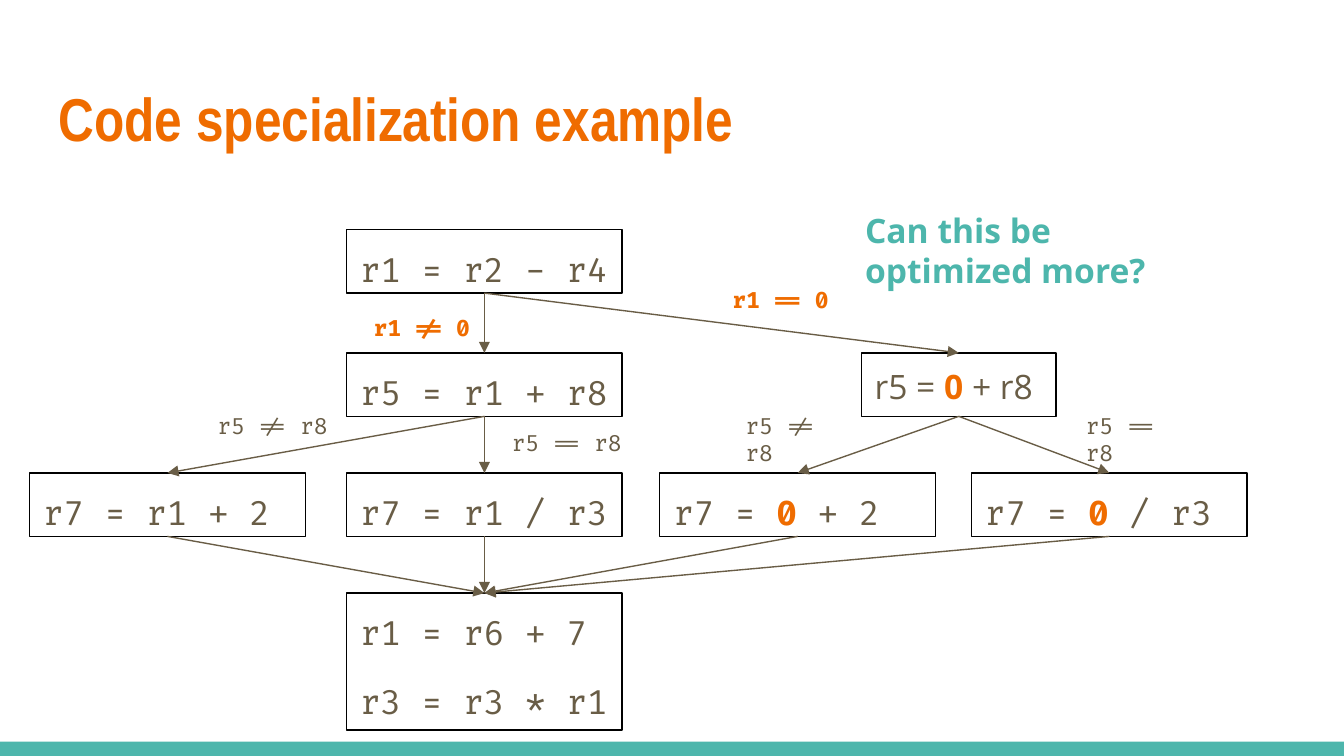
from lxml.etree import SubElement
from pptx import Presentation
from pptx.dml.color import RGBColor
from pptx.enum.shapes import MSO_CONNECTOR, MSO_SHAPE
from pptx.enum.text import MSO_ANCHOR as Anchor, PP_ALIGN as Align
from pptx.oxml.ns import qn
from pptx.util import Cm, Pt

TEAL = RGBColor(0x4D, 0xB6, 0xAC)
ORANGE = RGBColor(0xEF, 0x6C, 0x00)
BROWN = RGBColor(0x69, 0x5D, 0x46)
BLACK = RGBColor(0, 0, 0)
CODE, SANS, NARROW = "Fira Code", "Open Sans", "Arial Narrow"

BLOCK_WIDTH, BLOCK_HEIGHT = Cm(5.21), Cm(1.2)
TOP, BOTTOM = 0, 2  # connection sites of a rectangle


def plain(text):
    return [(text, BROWN, False)]


def bold(text, color=ORANGE):
    return [(text, color, True)]


def prepare_frame(shape, anchor=Anchor.TOP):
    frame = shape.text_frame
    frame.word_wrap = True
    frame.vertical_anchor = anchor
    frame.margin_left = frame.margin_right = Cm(0.25)
    frame.margin_top = frame.margin_bottom = Cm(0.25)
    return frame


def write_runs(paragraph, runs, font, size):
    paragraph.alignment = Align.LEFT
    for text, color, is_bold in runs:
        run = paragraph.add_run()
        run.text = text
        run.font.name = font
        run.font.size = Pt(size)
        run.font.bold = is_bold
        run.font.color.rgb = color


def add_text(slide, box, runs, font, size, anchor=Anchor.TOP):
    frame = prepare_frame(slide.shapes.add_textbox(*box), anchor)
    write_runs(frame.paragraphs[0], runs, font, size)


def add_block(slide, box, lines, font=CODE, line_spacing=1.15):
    """Outlined basic block with one paragraph for each line of code."""
    block = slide.shapes.add_shape(MSO_SHAPE.RECTANGLE, *box)
    block.shadow.inherit = False
    block.fill.background()
    block.line.color.rgb = BLACK
    block.line.width = Pt(0.75)
    frame = prepare_frame(block)
    for index, runs in enumerate(lines):
        paragraph = frame.add_paragraph() if index else frame.paragraphs[0]
        paragraph.line_spacing = line_spacing
        if index:
            paragraph.space_before = paragraph.space_after = Pt(12)
        write_runs(paragraph, runs, font, 18)
    return block


def add_arrow(slide, source, target):
    arrow = slide.shapes.add_connector(MSO_CONNECTOR.STRAIGHT, 0, 0, 0, 0)
    arrow.begin_connect(source, BOTTOM)
    arrow.end_connect(target, TOP)
    arrow.line.color.rgb = BROWN
    arrow.line.width = Pt(0.75)
    properties = arrow._element.spPr
    SubElement(properties.find(qn("a:ln")), qn("a:tailEnd"), type="triangle")
    SubElement(properties, qn("a:effectLst"))


def draw_footer(slide, box):
    bar = slide.shapes.add_shape(MSO_SHAPE.RECTANGLE, *box)
    bar.shadow.inherit = False
    bar.fill.solid()
    bar.fill.fore_color.rgb = TEAL
    bar.line.fill.background()


def draw_title(slide, box):
    add_text(slide, box, bold("Code specialization example"), NARROW, 32.4, Anchor.MIDDLE)


def draw_question(slide, box):
    add_text(slide, box, bold("Can this be optimized more?", TEAL), SANS, 18)


def draw_flow_graph(slide, left, top):
    """Control flow graph: blocks, arrows and branch conditions."""
    columns = [left + Cm(offset) for offset in (0, 5.99, 11.91, 17.8)]
    rows = [top + Cm(offset) for offset in (0, 2.33, 4.6, 6.87)]

    def block(column, row, *lines, height=BLOCK_HEIGHT):
        return add_block(slide, (columns[column], rows[row], BLOCK_WIDTH, height), lines)

    entry = block(1, 0, plain("r1 = r2 - r4"))
    general_sum = block(1, 1, plain("r5 = r1 + r8"))
    special_sum = add_block(
        slide, (left + Cm(15.72), rows[1], Cm(3.68), BLOCK_HEIGHT),
        [plain("r5 = ") + bold("0 ") + plain("+ r8")], SANS, 1.0)
    general_add = block(0, 2, plain("r7 = r1 + 2"))
    general_divide = block(1, 2, plain("r7 = r1 / r3"))
    special_add = block(2, 2, plain("r7 = ") + bold("0") + plain(" + 2"))
    special_divide = block(3, 2, plain("r7 = ") + bold("0 ") + plain("/ r3"))
    merge = block(1, 3, plain("r1 = r6 + 7"), plain("r3 = r3 * r1"), height=Cm(2.59))

    branches = [
        (entry, (general_sum, special_sum)),
        (general_sum, (general_add, general_divide)),
        (special_sum, (special_add, special_divide)),
    ]
    for source, targets in branches:
        for target in targets:
            add_arrow(slide, source, target)
            if source is not entry:
                add_arrow(slide, target, merge)

    conditions = [
        (6.25, 1.35, 2.36, bold("r1 != 0")),
        (13.03, 0.81, 2.36, bold("r1 == 0")),
        (3.3, 3.2, 2.69, plain("r5 != r8")),
        (8.86, 3.53, 2.69, plain("r5 == r8")),
        (13.28, 3.2, 2.54, plain("r5 != r8")),
        (19.71, 3.2, 2.54, plain("r5 == r8")),
    ]
    for x, y, width, runs in conditions:
        add_text(slide, (left + Cm(x), top + Cm(y), Cm(width), Cm(0.84)), runs, CODE, 12)


def main():
    presentation = Presentation()
    presentation.slide_width, presentation.slide_height = Cm(25.4), Cm(14.29)
    slide = presentation.slides.add_slide(presentation.slide_layouts[6])
    draw_footer(slide, (0, Cm(14.02), Cm(25.4), Cm(0.27)))
    draw_title(slide, (Cm(0.86), Cm(1.24), Cm(23.67), Cm(1.96)))
    draw_flow_graph(slide, Cm(0.56), Cm(4.34))
    draw_question(slide, (Cm(16.1), Cm(3.71), Cm(6.53), Cm(2.39)))
    presentation.save("out.pptx")


if __name__ == "__main__":
    main()
